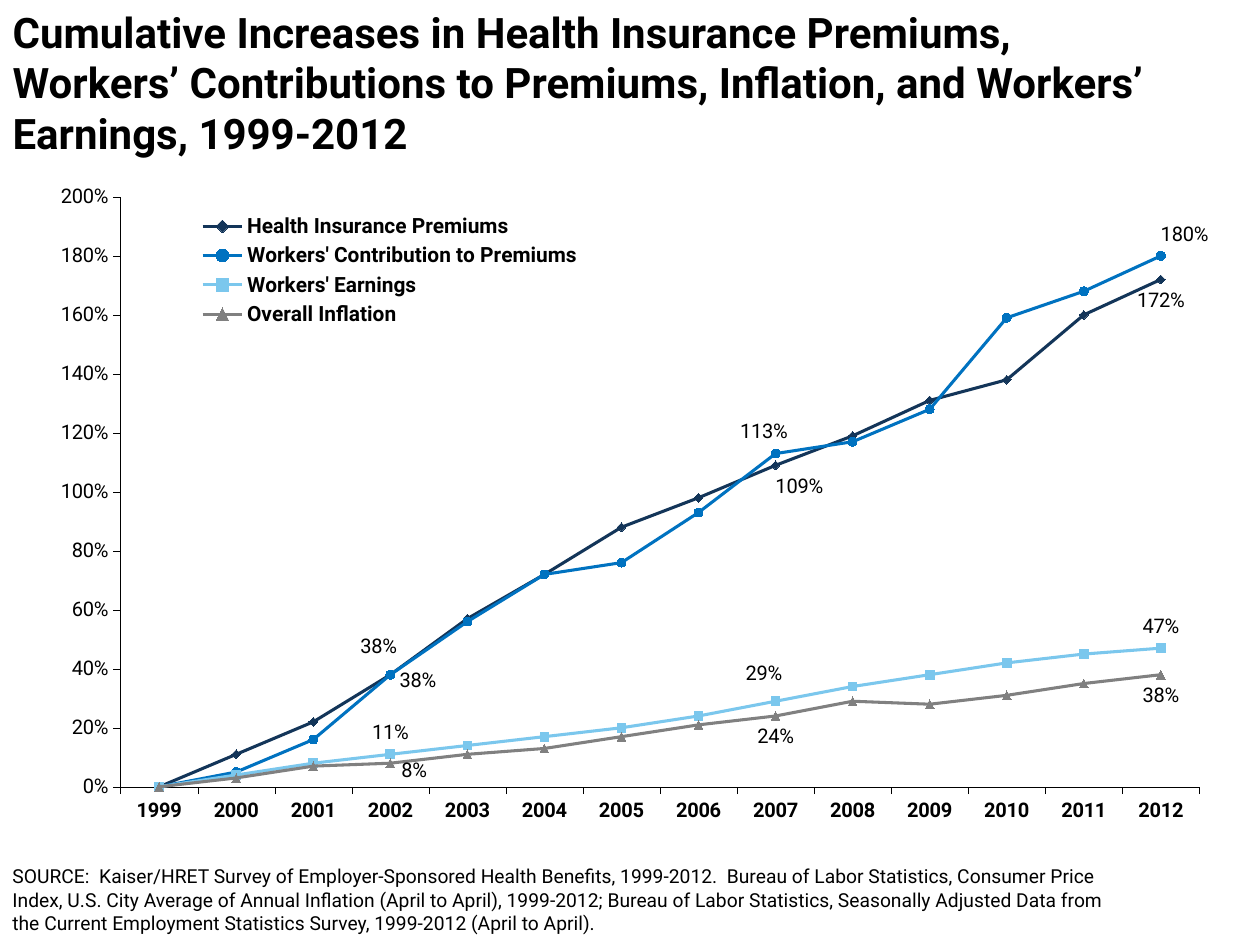
from dataclasses import dataclass, field

import pptx
import pptx.chart.data
import pptx.dml.color
import pptx.enum.chart
import pptx.enum.text
import pptx.oxml
import pptx.oxml.ns
import pptx.util

MARKER = pptx.enum.chart.XL_MARKER_STYLE
LABEL = pptx.enum.chart.XL_LABEL_POSITION
ANCHOR = pptx.enum.text.MSO_ANCHOR
TITLE_ONLY_LAYOUT = 5


@dataclass(frozen=True)
class Theme:
    font: str = "Roboto"
    text: str = "000000"
    premiums: str = "133559"
    contributions: str = "0072C0"
    earnings: str = "7BC7ED"
    inflation: str = "808080"
    title_size: float = 24
    legend_size: float = 12
    chart_size: float = 11.5
    source_size: float = 11
    series_line: float = 1.75
    axis_line: float = 0.25
    marker_size: int = 5


@dataclass(frozen=True)
class Box:
    """Position and size as shares of the containing slide or chart."""
    left: float
    top: float
    width: float
    height: float


@dataclass(frozen=True)
class PointLabel:
    """Label of one year, shifted by shares of the chart's size."""
    year: int
    position: LABEL
    shift_x: float = 0
    shift_y: float = 0


@dataclass(frozen=True)
class Trend:
    name: str
    color: str
    marker: MARKER
    values: tuple
    labels: tuple = field(default=())


THEME = Theme()
YEARS = range(1999, 2013)
TITLE_BOX = Box(0, 0, 0.942, 0.127)
CHART_BOX = Box(0.017, 0.189, 0.942, 0.696)
SOURCE_BOX = Box(0, 0.885, 0.9, 0.11)
PLOT_BOX = Box(0.084, 0.028, 0.913, 0.897)
LEGEND_BOX = Box(0.147, 0.047, 0.33, 0.185)

TITLE = ("Cumulative Increases in Health Insurance Premiums, Workers’ Contributions "
         "to Premiums, Inflation, and Workers’ Earnings, 1999-2012")
SOURCE = ("SOURCE:  Kaiser/HRET Survey of Employer-Sponsored Health Benefits, 1999-2012.  "
          "Bureau of Labor Statistics, Consumer Price Index, U.S. City Average of Annual "
          "Inflation (April to April), 1999-2012; Bureau of Labor Statistics, Seasonally "
          "Adjusted Data from the Current Employment Statistics Survey, 1999-2012 "
          "(April to April).")

TRENDS = (
    Trend("Health Insurance Premiums", THEME.premiums, MARKER.DIAMOND,
          (0, 0.11, 0.22, 0.38, 0.57, 0.72, 0.88, 0.98, 1.09, 1.19, 1.31, 1.38, 1.60, 1.72),
          (PointLabel(2002, LABEL.RIGHT, 0, 0.01),
           PointLabel(2007, LABEL.BELOW, 0.02, 0),
           PointLabel(2012, LABEL.BELOW))),
    Trend("Workers' Contribution to Premiums", THEME.contributions, MARKER.CIRCLE,
          (0, 0.05, 0.16, 0.38, 0.56, 0.72, 0.76, 0.93, 1.13, 1.17, 1.28, 1.59, 1.68, 1.80),
          (PointLabel(2002, LABEL.ABOVE, -0.01, -0.01),
           PointLabel(2007, LABEL.ABOVE, -0.01, 0),
           PointLabel(2012, LABEL.ABOVE, 0.02, 0))),
    Trend("Workers' Earnings", THEME.earnings, MARKER.SQUARE,
          (0, 0.04, 0.08, 0.11, 0.14, 0.17, 0.20, 0.24, 0.29, 0.34, 0.38, 0.42, 0.45, 0.47),
          (PointLabel(2002, LABEL.ABOVE),
           PointLabel(2007, LABEL.ABOVE, -0.01, -0.01),
           PointLabel(2012, LABEL.ABOVE))),
    Trend("Overall Inflation", THEME.inflation, MARKER.TRIANGLE,
          (0, 0.03, 0.07, 0.08, 0.11, 0.13, 0.17, 0.21, 0.24, 0.29, 0.28, 0.31, 0.35, 0.38),
          (PointLabel(2002, LABEL.BELOW, 0.02, -0.02),
           PointLabel(2007, LABEL.BELOW),
           PointLabel(2012, LABEL.BELOW))),
)


def rgb(color: str) -> pptx.dml.color.RGBColor:
    return pptx.dml.color.RGBColor.from_string(color)


def on_slide(presentation, box: Box) -> tuple:
    width, height = presentation.slide_width, presentation.slide_height
    return (round(box.left * width), round(box.top * height),
            round(box.width * width), round(box.height * height))


def format_font(font, *, size: float, bold: bool = False) -> None:
    font.name = THEME.font
    font.size = pptx.util.Pt(size)
    font.bold = bold
    font.color.rgb = rgb(THEME.text)


def write_text(shape, text: str, *, size: float, bold: bool = False, anchor=ANCHOR.TOP) -> None:
    frame = shape.text_frame
    frame.word_wrap = True
    frame.auto_size = pptx.enum.text.MSO_AUTO_SIZE.NONE
    frame.vertical_anchor = anchor
    paragraph = frame.paragraphs[0]
    paragraph.alignment = pptx.enum.text.PP_ALIGN.LEFT
    paragraph.space_before = pptx.util.Pt(0)
    run = paragraph.add_run()
    run.text = text
    format_font(run.font, size=size, bold=bold)


def set_layout(parent, index: int, **settings) -> None:
    """Give a chart part a manual layout, as child number index."""
    for old in parent.findall(pptx.oxml.ns.qn("c:layout")):
        parent.remove(old)
    items = "".join(f'<c:{name} val="{value}"/>' for name, value in settings.items())
    parent.insert(index, pptx.oxml.parse_xml(
        f'<c:layout {pptx.oxml.ns.nsdecls("c")}><c:manualLayout>{items}'
        '</c:manualLayout></c:layout>'))


def place_part(parent, index: int, box: Box, **target) -> None:
    set_layout(parent, index, **target, xMode="edge", yMode="edge",
               x=box.left, y=box.top, w=box.width, h=box.height)


def format_axis(axis, *, bold: bool = False) -> None:
    axis.has_major_gridlines = False
    axis.major_tick_mark = pptx.enum.chart.XL_TICK_MARK.OUTSIDE
    axis.minor_tick_mark = pptx.enum.chart.XL_TICK_MARK.NONE
    axis.format.line.color.rgb = rgb(THEME.text)
    axis.format.line.width = pptx.util.Pt(THEME.axis_line)
    format_font(axis.tick_labels.font, size=THEME.chart_size, bold=bold)


def format_series(series, trend: Trend) -> None:
    color = rgb(trend.color)
    series.smooth = False
    series.format.line.color.rgb = color
    series.format.line.width = pptx.util.Pt(THEME.series_line)
    series.marker.style = trend.marker
    series.marker.size = THEME.marker_size
    series.marker.format.fill.solid()
    series.marker.format.fill.fore_color.rgb = color
    series.marker.format.line.color.rgb = color
    series.data_labels.show_value = False
    for label in trend.labels:
        index = YEARS.index(label.year)
        data_label = series.points[index].data_label
        format_font(data_label.font, size=THEME.chart_size)
        data_label.position = label.position
        if label.shift_x or label.shift_y:
            element = series._element.xpath(f'c:dLbls/c:dLbl[c:idx/@val="{index}"]')[0]
            set_layout(element, 1, x=label.shift_x, y=label.shift_y)


def add_trend_chart(presentation, slide) -> None:
    data = pptx.chart.data.CategoryChartData(number_format="0%")
    data.categories = [str(year) for year in YEARS]
    for trend in TRENDS:
        data.add_series(trend.name, trend.values)
    chart = slide.shapes.add_chart(pptx.enum.chart.XL_CHART_TYPE.LINE_MARKERS,
                                   *on_slide(presentation, CHART_BOX), data).chart
    chart.has_title = False
    format_font(chart.font, size=THEME.chart_size)
    chart.plots[0].vary_by_categories = False
    for series, trend in zip(chart.plots[0].series, TRENDS):
        format_series(series, trend)

    format_axis(chart.category_axis, bold=True)
    format_axis(chart.value_axis)
    chart.value_axis.minimum_scale = 0
    chart.value_axis.maximum_scale = 2
    chart.value_axis.major_unit = 0.2
    chart.value_axis.tick_labels.number_format = "0%"
    chart.value_axis.tick_labels.number_format_is_linked = False

    chart.has_legend = True
    chart.legend.position = pptx.enum.chart.XL_LEGEND_POSITION.BOTTOM
    chart.legend.include_in_layout = False
    format_font(chart.legend.font, size=THEME.legend_size, bold=True)
    place_part(chart.legend._element, 1, LEGEND_BOX)
    plot_area = chart._chartSpace.xpath("c:chart/c:plotArea")[0]
    place_part(plot_area, 0, PLOT_BOX, layoutTarget="inner")


def main() -> None:
    presentation = pptx.Presentation()
    presentation.slide_width = pptx.util.Inches(10)
    presentation.slide_height = pptx.util.Inches(7.5)
    slide = presentation.slides.add_slide(presentation.slide_layouts[TITLE_ONLY_LAYOUT])
    title = slide.shapes.title
    title.left, title.top, title.width, title.height = on_slide(presentation, TITLE_BOX)
    write_text(title, TITLE, size=THEME.title_size, bold=True)
    add_trend_chart(presentation, slide)
    source = slide.shapes.add_textbox(*on_slide(presentation, SOURCE_BOX))
    write_text(source, SOURCE, size=THEME.source_size, anchor=ANCHOR.BOTTOM)
    presentation.save("out.pptx")


if __name__ == "__main__":
    main()
